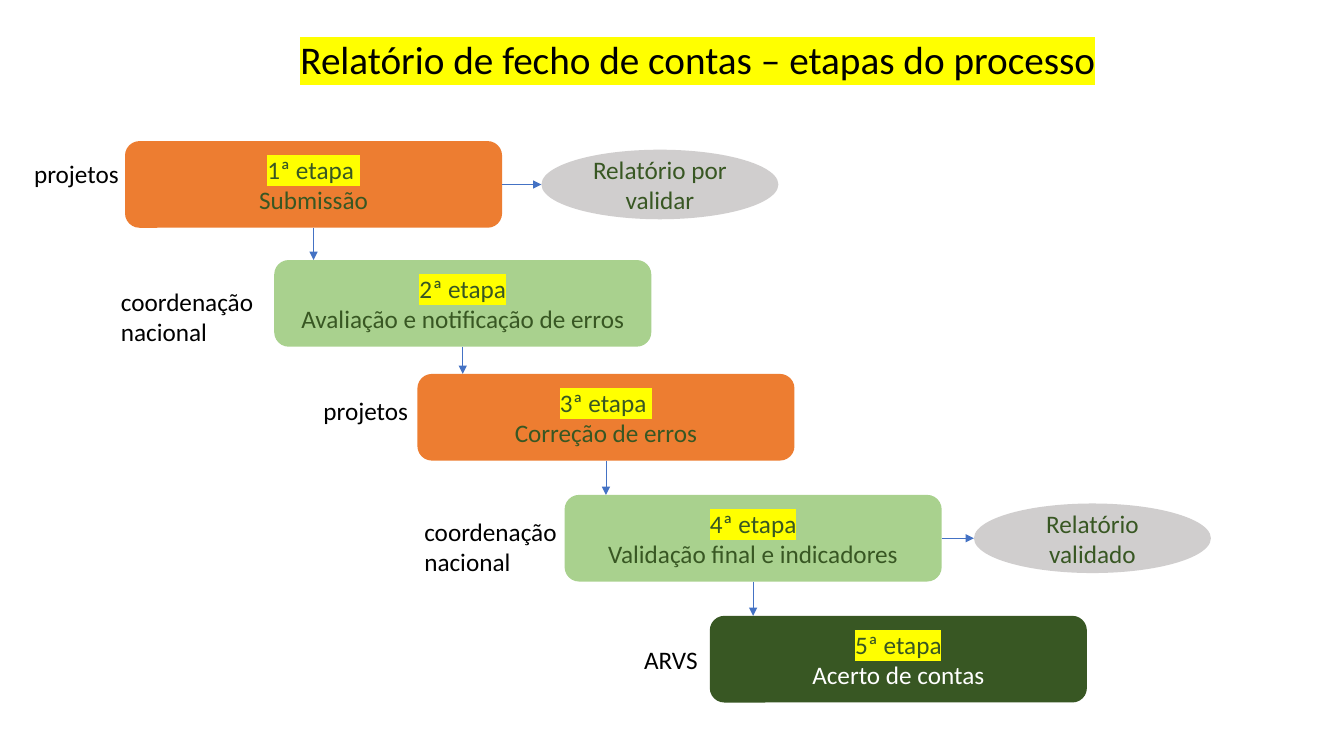
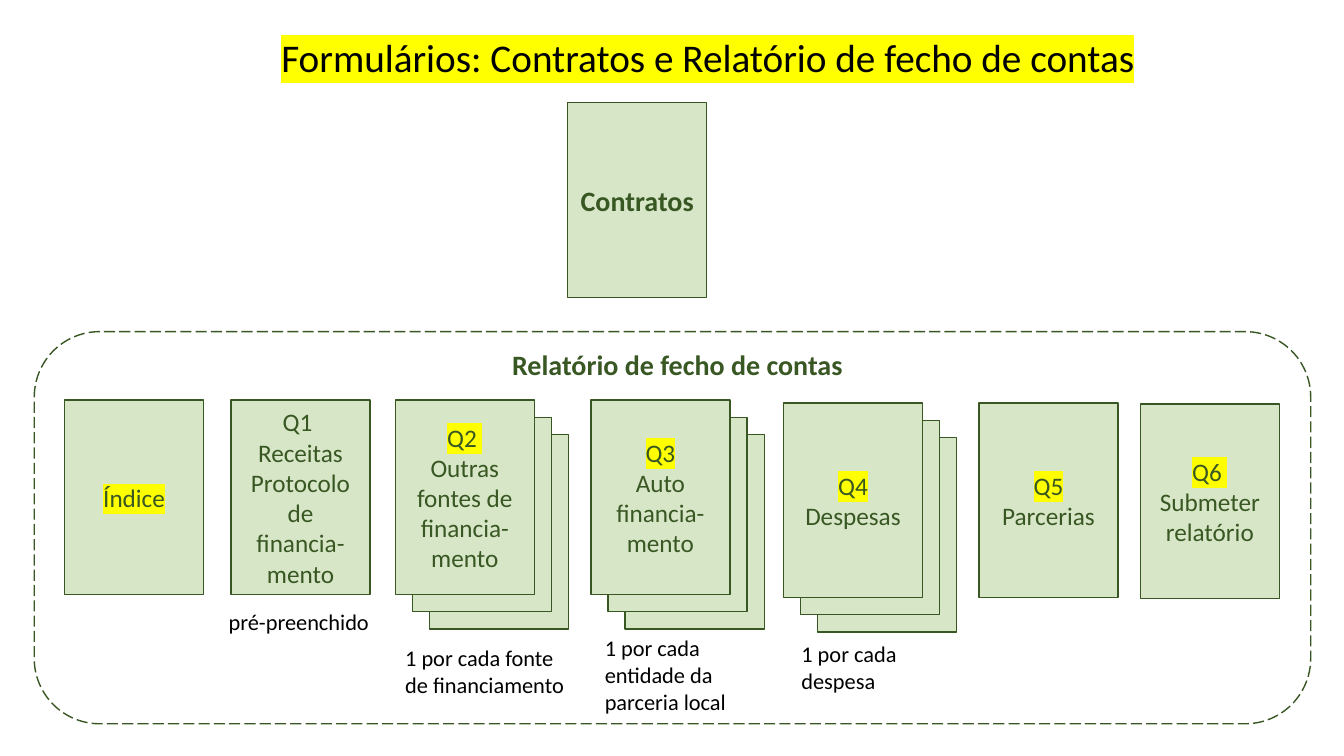
import pptx
import pptx.util
import pptx.dml.color
import pptx.enum.dml
import pptx.enum.shapes
import pptx.enum.text
import pptx.oxml
import pptx.oxml.ns
from pptx.util import Inches

FONT = "Calibri"
BLACK, WHITE, YELLOW = "000000", "FFFFFF", "FFFF00"
DARK_GREEN, GREEN, PALE_GREEN = "385723", "A9D18E", "D7E6C7"
ORANGE, GREY, BLUE = "ED7D31", "D0CECE", "4472C4"

ALIGN = pptx.enum.text.PP_ALIGN
ANCHOR = pptx.enum.text.MSO_ANCHOR
SHAPE = pptx.enum.shapes.MSO_SHAPE

# Slide 1: left, top, fill, text colour, lines of each step
STEPS = [
    (1.24, 1.40, ORANGE, DARK_GREEN, ["1ª etapa ", "Submissão"]),
    (2.72, 2.58, GREEN, DARK_GREEN, ["2ª etapa", "Avaliação e notificação de erros"]),
    (4.14, 3.71, ORANGE, DARK_GREEN, ["3ª etapa ", "Correção de erros"]),
    (5.60, 4.91, GREEN, DARK_GREEN, ["4ª etapa", "Validação final e indicadores"]),
    (7.04, 6.11, DARK_GREEN, WHITE, ["5ª etapa", "Acerto de contas"]),
]
STEP_WIDTH, STEP_HEIGHT = 3.74, 0.86
# Left, top, width, height, text
ACTORS = [
    (0.24, 1.52, 1.10, 0.40, "projetos"),
    (1.10, 2.79, 1.62, 0.71, "coordenação nacional"),
    (3.11, 3.87, 1.10, 0.40, "projetos"),
    (4.11, 5.07, 1.62, 0.71, "coordenação nacional"),
    (6.29, 6.34, 1.10, 0.40, "ARVS"),
]
# Step index, left, text
RESULTS = [(0, 5.37, "Relatório por validar"), (3, 9.66, "Relatório validado")]
RESULT_WIDTH, RESULT_HEIGHT = 2.35, 0.69

# Slide 2: left, top, sheets in the stack, first line highlighted, lines
FORMS = [
    (0.64, 3.97, 1, True, ["Índice"]),
    (2.29, 3.97, 1, False, ["Q1 ", "Receitas Protocolo de financia-mento"]),
    (3.92, 3.97, 3, True, ["Q2 ", "Outras fontes de financia-mento"]),
    (5.86, 3.97, 3, True, ["Q3", "Auto financia-", "mento"]),
    (7.77, 4.00, 3, True, ["Q4", "Despesas"]),
    (9.71, 4.00, 1, True, ["Q5", "Parcerias"]),
    (11.31, 4.01, 1, True, ["Q6 ", "Submeter relatório"]),
]
FORM_WIDTH, FORM_HEIGHT, SHEET_SHIFT = 1.38, 1.93, 0.17
FORM_NOTES = [
    (2.17, 5.98, 1.64, 0.37, "pré-preenchido"),
    (3.92, 6.34, 1.88, 0.64, "1 por cada fonte de financiamento"),
    (5.90, 6.24, 1.76, 0.91, "1 por cada entidade da parceria local"),
    (7.85, 6.30, 1.32, 0.64, "1 por cada despesa"),
]


def rgb(value):
    return pptx.dml.color.RGBColor.from_string(value)


def highlight(run):
    run._r.get_or_add_rPr().append(pptx.oxml.parse_xml(
        f'<a:highlight {pptx.oxml.ns.nsdecls("a")}><a:srgbClr val="{YELLOW}"/></a:highlight>'))


def write(shape, lines, size=18, color=BLACK, bold=False, align=ALIGN.LEFT,
          anchor=ANCHOR.TOP, marked=False):
    """Write one paragraph per line; marked highlights the first one."""
    frame = shape.text_frame
    frame.word_wrap = True
    frame.auto_size = pptx.enum.text.MSO_AUTO_SIZE.NONE
    frame.vertical_anchor = anchor
    for index, line in enumerate(lines):
        paragraph = frame.paragraphs[0] if index == 0 else frame.add_paragraph()
        paragraph.alignment = align
        font = paragraph.font
        font.name, font.size, font.bold = FONT, pptx.util.Pt(size), bold
        first_marked = marked and index == 0
        # White is unreadable on the highlight
        font.color.rgb = rgb(DARK_GREEN if first_marked and color == WHITE else color)
        run = paragraph.add_run()
        run.text = line
        if first_marked:
            highlight(run)


def add_titled_slide(presentation, text, left, top, width):
    slide = presentation.slides.add_slide(presentation.slide_layouts[5])
    title = slide.shapes.title
    title.left, title.top = Inches(left), Inches(top)
    title.width, title.height = Inches(width), Inches(0.57)
    write(title, [text], size=28, marked=True)
    return slide


def add_box(slide, kind, left, top, width, height, fill, line=None):
    shape = slide.shapes.add_shape(
        kind, Inches(left), Inches(top), Inches(width), Inches(height))
    shape.shadow.inherit = False
    shape.fill.solid()
    shape.fill.fore_color.rgb = rgb(fill)
    if line:
        shape.line.color.rgb = rgb(line)
        shape.line.width = pptx.util.Pt(1)
    else:
        shape.line.fill.background()
    return shape


def add_label(slide, left, top, width, height, text, **style):
    box = slide.shapes.add_textbox(
        Inches(left), Inches(top), Inches(width), Inches(height))
    write(box, [text], **style)


def add_arrow(slide, start, end):
    points = [Inches(value) for value in (*start, *end)]
    arrow = slide.shapes.add_connector(
        pptx.enum.shapes.MSO_CONNECTOR.STRAIGHT, *points)
    arrow.line.color.rgb = rgb(BLUE)
    arrow.line.width = pptx.util.Pt(0.5)
    namespace = pptx.oxml.ns.nsdecls("a")
    arrow.line._get_or_add_ln().append(
        pptx.oxml.parse_xml(f'<a:tailEnd {namespace} type="triangle"/>'))
    arrow._element.spPr.append(pptx.oxml.parse_xml(f"<a:effectLst {namespace}/>"))


def add_form(slide, left, top, lines, sheets=1, **style):
    # Back sheets first, front sheet last
    for depth in reversed(range(sheets)):
        shift = depth * SHEET_SHIFT
        sheet = add_box(slide, SHAPE.RECTANGLE, left + shift, top + shift,
                        FORM_WIDTH, FORM_HEIGHT, PALE_GREEN, DARK_GREEN)
    write(sheet, lines, color=DARK_GREEN, align=ALIGN.CENTER,
          anchor=ANCHOR.MIDDLE, **style)


def build_process(presentation):
    slide = add_titled_slide(
        presentation, "Relatório de fecho de contas – etapas do processo", 2.88, 0.3, 8.32)
    centered = {"align": ALIGN.CENTER, "anchor": ANCHOR.MIDDLE}

    # Staircase of steps, each with an arrow down to the next
    for index, (left, top, fill, color, lines) in enumerate(STEPS):
        step = add_box(slide, SHAPE.ROUNDED_RECTANGLE, left, top,
                       STEP_WIDTH, STEP_HEIGHT, fill)
        write(step, lines, color=color, marked=True, **centered)
        if index + 1 < len(STEPS):
            middle = left + STEP_WIDTH / 2
            add_arrow(slide, (middle, top + STEP_HEIGHT), (middle, STEPS[index + 1][1]))

    # Who acts in each step
    for actor in ACTORS:
        add_label(slide, *actor)

    # Resulting reports, level with their step
    for index, left, text in RESULTS:
        step_left, step_top = STEPS[index][:2]
        middle = step_top + STEP_HEIGHT / 2
        result = add_box(slide, SHAPE.OVAL, left, middle - RESULT_HEIGHT / 2,
                         RESULT_WIDTH, RESULT_HEIGHT, GREY)
        write(result, [text], color=DARK_GREEN, **centered)
        add_arrow(slide, (step_left + STEP_WIDTH, middle), (left, middle))


def build_forms(presentation):
    slide = add_titled_slide(
        presentation, "Formulários: Contratos e Relatório de fecho de contas", 2.69, 0.28, 8.85)

    # Contracts form
    add_form(slide, 5.63, 1.02, ["Contratos"], size=20, bold=True)

    # Report frame and heading
    frame = add_box(slide, SHAPE.ROUNDED_RECTANGLE, 0.34, 3.29, 12.66, 3.89,
                    WHITE, DARK_GREEN)
    frame.line.dash_style = pptx.enum.dml.MSO_LINE.LONG_DASH
    add_label(slide, 4.98, 3.4, 3.81, 0.44, "Relatório de fecho de contas",
              size=20, color=DARK_GREEN, bold=True)

    # Forms of the report and their notes
    for left, top, sheets, marked, lines in FORMS:
        add_form(slide, left, top, lines, sheets, marked=marked)
    for note in FORM_NOTES:
        add_label(slide, *note, size=16)


def main():
    presentation = pptx.Presentation()
    presentation.slide_width, presentation.slide_height = Inches(13.33), Inches(7.5)
    build_process(presentation)
    build_forms(presentation)
    presentation.save("out.pptx")


if __name__ == "__main__":
    main()
